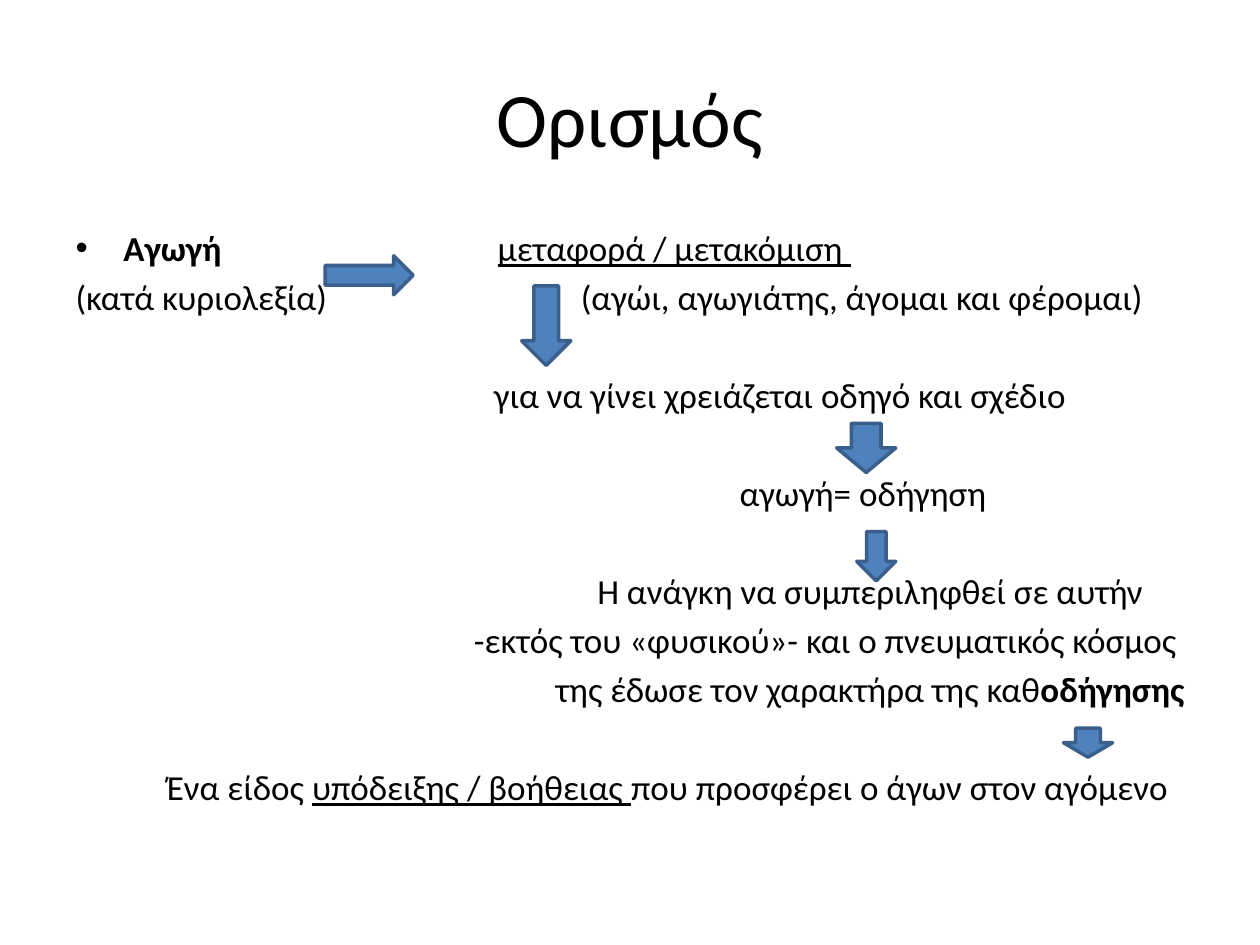
"""Builds the slide that defines the term αγωγή as a chain of meanings."""
from lxml import etree
from pptx import Presentation
from pptx import util as u
from pptx.dml.color import RGBColor
from pptx.enum import shapes, text
from pptx.oxml.ns import qn

COLORS = {"text": "000000", "arrow": "4F81BD", "outline": "3A5F8C"}
ROW_GAP, SKIPPED_ROW_GAP = 4, 32


def write(paragraph, words, size=20, bold=False, underline=False):
    run = paragraph.add_run()
    run.text = words
    run.font.name = "Calibri"
    run.font.size = u.Pt(size)
    run.font.bold = bold
    run.font.underline = underline
    run.font.color.rgb = RGBColor.from_string(COLORS["text"])


deck = Presentation()
deck.slide_width, deck.slide_height = u.Inches(10), u.Inches(7.5)
slide = deck.slides.add_slide(deck.slide_layouts[1])

heading, definition = slide.shapes.title, slide.placeholders[1]
for part, top, height in ((heading, 0.3, 1.25), (definition, 1.75, 4.95)):
    part.left, part.top = u.Inches(0.5), u.Inches(top)
    part.width, part.height = u.Inches(9), u.Inches(height)
    part.text_frame.word_wrap = True
    part.text_frame.auto_size = text.MSO_AUTO_SIZE.NONE

heading.text_frame.vertical_anchor = text.MSO_ANCHOR.MIDDLE
heading.text_frame.paragraphs[0].alignment = text.PP_ALIGN.CENTER
write(heading.text_frame.paragraphs[0], "Ορισμός", size=44)

BOLD, UNDERLINE = {"bold": True}, {"underline": True}
LEFT, RIGHT = text.PP_ALIGN.LEFT, text.PP_ALIGN.RIGHT
meanings = [
    (LEFT, 0.38, ROW_GAP, [("Αγωγή\t", BOLD), ("μεταφορά / μετακόμιση ", UNDERLINE)]),
    (LEFT, 0, ROW_GAP, [("(κατά κυριολεξία)", {})]),
    (LEFT, 3.32, SKIPPED_ROW_GAP, [("για να γίνει χρειάζεται οδηγό και σχέδιο", {})]),
    (LEFT, 5.27, SKIPPED_ROW_GAP, [("αγωγή= οδήγηση", {})]),
    (LEFT, 4.14, SKIPPED_ROW_GAP, [("Η ανάγκη να συμπεριληφθεί σε αυτήν", {})]),
    (RIGHT, 0.06, ROW_GAP, [("-εκτός του «φυσικού»- και ο πνευματικός κόσμος", {})]),
    (RIGHT, 0, ROW_GAP, [("της έδωσε τον χαρακτήρα της καθ", {}), ("οδήγησης", BOLD)]),
    (RIGHT, 0.13, SKIPPED_ROW_GAP, [("Ένα είδος ", {}), ("υπόδειξης / βοήθειας ", UNDERLINE),
                                    ("που προσφέρει ο άγων στον αγόμενο", {})]),
]
for row, (side, margin, gap, phrases) in enumerate(meanings):
    line = definition.text_frame.paragraphs[0] if row == 0 else definition.text_frame.add_paragraph()
    line.alignment = side
    line.space_before = u.Pt(gap if row else 0)
    props = line._p.get_or_add_pPr()
    props.set("marL", str(u.Inches(margin if side == LEFT else 0)))
    props.set("marR", str(u.Inches(margin if side == RIGHT else 0)))
    props.set("indent", str(u.Inches(0 if row else -margin)))
    if row == 0:
        etree.SubElement(props, qn("a:buChar"), char="•")
        stops = etree.SubElement(props, qn("a:tabLst"))
        etree.SubElement(stops, qn("a:tab"), pos=str(u.Inches(3.35)), algn="l")
    else:
        etree.SubElement(props, qn("a:buNone"))
    for words, style in phrases:
        write(line, words, **style)

examples = slide.shapes.add_textbox(*map(u.Inches, (4.61, 2.19, 4.79, 0.34))).text_frame
examples.word_wrap = True
examples.margin_left = examples.margin_right = examples.margin_top = examples.margin_bottom = 0
write(examples.paragraphs[0], "(αγώι, αγωγιάτης, άγομαι και φέρομαι)")

ACROSS, DOWN = shapes.MSO_SHAPE.RIGHT_ARROW, shapes.MSO_SHAPE.DOWN_ARROW
steps = [
    (ACROSS, 2.58, 2.03, 0.7, 0.31),
    (DOWN, 4.14, 2.27, 0.39, 0.63),
    (DOWN, 6.64, 3.36, 0.47, 0.39),
    (DOWN, 6.8, 4.22, 0.31, 0.39),
    (DOWN, 8.44, 5.78, 0.39, 0.23),
]
for direction, *box in steps:
    arrow = slide.shapes.add_shape(direction, *map(u.Inches, box))
    arrow.shadow.inherit = False
    arrow.fill.solid()
    arrow.fill.fore_color.rgb = RGBColor.from_string(COLORS["arrow"])
    arrow.line.color.rgb = RGBColor.from_string(COLORS["outline"])
    arrow.line.width = u.Pt(2)

deck.save("out.pptx")
